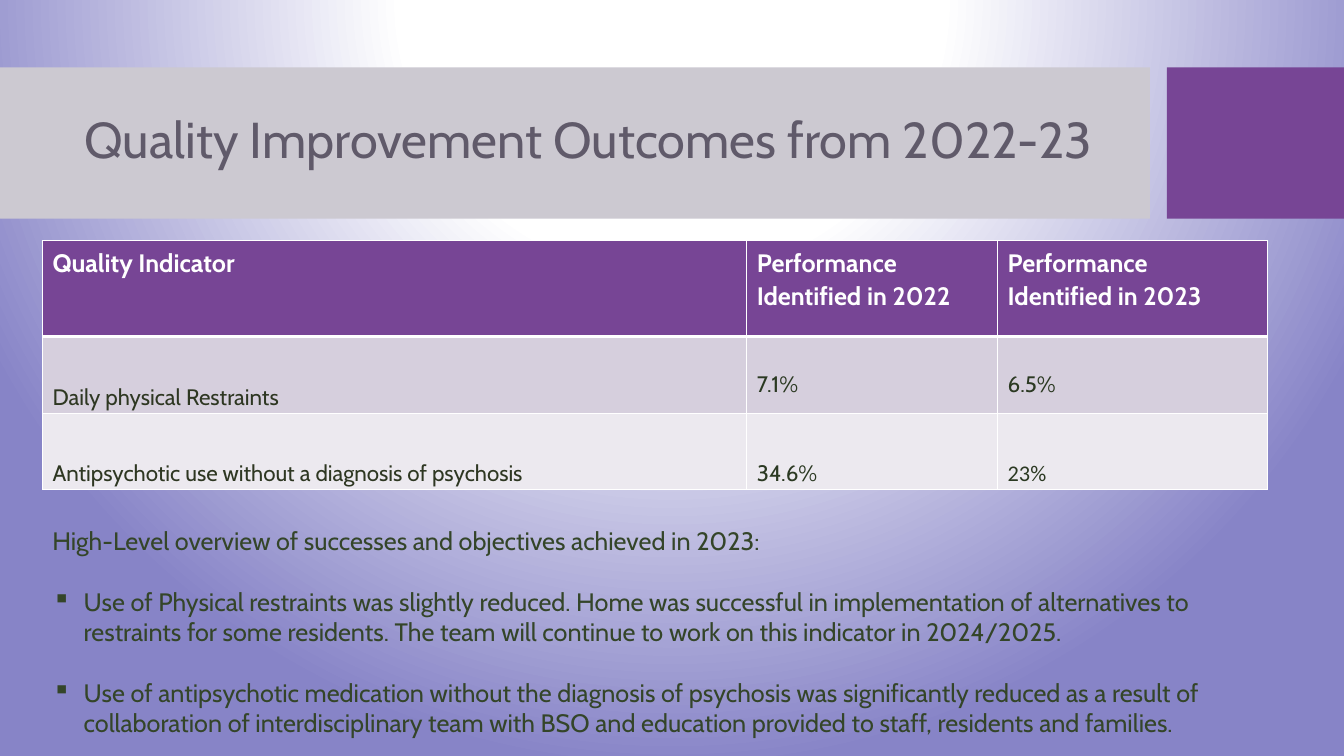
from dataclasses import dataclass

from pptx import Presentation
from pptx.dml.color import RGBColor as Color
from pptx.enum.shapes import MSO_SHAPE as Shape
from pptx.enum.text import MSO_ANCHOR as Anchor
from pptx.oxml import parse_xml
from pptx.oxml.ns import nsdecls
from pptx.util import Cm, Pt


@dataclass(frozen=True)
class Theme:
    """Colours, fonts and type sizes of the slide."""
    font: str = "Cabin"
    figure_font: str = "Calibri"
    white: str = "FFFFFF"
    lavender: str = "8784C7"
    band: str = "CCC9D1"
    purple: str = "774595"
    title: str = "605A6A"
    body: str = "344529"
    label: str = "2E3722"
    figure: str = "2B3922"
    row_fills: tuple = ("D6CFDD", "ECE9EF")
    title_size: int = 36
    body_size: int = 18
    cell_size: int = 16


class Composer:
    """Draws styled elements on the current slide."""

    def __init__(self, page, theme):
        self.page = page
        self.theme = theme

    def backdrop(self):
        """Fill the slide with a radial gradient centred above it."""
        self.page.background.fill.solid()
        solid = self.page.element.xpath("./p:cSld/p:bg/p:bgPr/a:solidFill")[0]
        stops = ((0, self.theme.white), (35, self.theme.white), (100, self.theme.lavender))
        stop_xml = "".join(
            f'<a:gs pos="{place * 1000}"><a:srgbClr val="{color}"/></a:gs>'
            for place, color in stops)
        solid.getparent().replace(solid, parse_xml(
            f'<a:gradFill {nsdecls("a")} rotWithShape="1"><a:gsLst>{stop_xml}</a:gsLst>'
            '<a:path path="circle"><a:fillToRect l="50000" t="-80000" r="50000" b="180000"/>'
            '</a:path></a:gradFill>'))

    def block(self, left, top, width, height, color):
        """Add a plain filled rectangle."""
        block = self.page.shapes.add_shape(
            Shape.RECTANGLE, Cm(left), Cm(top), Cm(width), Cm(height))
        block.shadow.inherit = False
        block.fill.solid()
        block.fill.fore_color.rgb = Color.from_string(color)
        block.line.fill.background()

    def style(self, para, size, color, bold=False, font=None):
        """Set the font of a whole paragraph."""
        para.font.name = font or self.theme.font
        para.font.size = Pt(size)
        para.font.bold = bold
        para.font.color.rgb = Color.from_string(color)

    def text_box(self, left, top, width, height):
        """Add a wrapping text box and return its frame."""
        box = self.page.shapes.add_textbox(Cm(left), Cm(top), Cm(width), Cm(height))
        box.text_frame.word_wrap = True
        return box.text_frame

    def title(self, text, *place):
        """Add the slide title, centred vertically."""
        frame = self.text_box(*place)
        frame.vertical_anchor = Anchor.MIDDLE
        para = frame.paragraphs[0]
        para.text = text
        para.line_spacing = 0.9
        self.style(para, self.theme.title_size, self.theme.title)

    def overview(self, lead, points, *place):
        """Add a lead line followed by bulleted points."""
        frame = self.text_box(*place)
        frame.text = lead
        self.style(frame.paragraphs[0], self.theme.body_size, self.theme.body)
        for point in points:
            para = frame.add_paragraph()
            para.text = point
            para.space_before = Pt(22)
            props = para._p.get_or_add_pPr()
            props.set("marL", str(Cm(0.79)))
            props.set("indent", str(-Cm(0.79)))
            props.append(parse_xml(f'<a:buChar {nsdecls("a")} char="▪"/>'))
            self.style(para, self.theme.body_size, self.theme.body)

    def borders(self, cell, top, bottom):
        """Draw white cell borders with given top and bottom weights."""
        props = cell._tc.get_or_add_tcPr()
        weights = {"L": 1, "R": 1, "T": top, "B": bottom}
        for side, weight in weights.items():
            props.append(parse_xml(
                f'<a:ln{side} {nsdecls("a")} w="{Pt(weight)}"><a:solidFill>'
                f'<a:srgbClr val="{self.theme.white}"/></a:solidFill></a:ln{side}>'))

    def cell(self, cell, text, fill, top=1, bottom=1, inset=0.13, **look):
        """Write one table cell with its fill, borders and text style."""
        self.borders(cell, top, bottom)
        cell.fill.solid()
        cell.fill.fore_color.rgb = Color.from_string(fill)
        cell.margin_top = Cm(inset)
        cell.margin_bottom = Cm(0.05)
        cell.text = text
        para = cell.text_frame.paragraphs[0]
        para.line_spacing = 1.07
        self.style(para, **look)

    def table(self, header, rows, left, top, widths, heights):
        """Add the indicator table."""
        theme = self.theme
        table = self.page.shapes.add_table(
            len(heights), len(widths), Cm(left), Cm(top),
            Cm(sum(widths)), Cm(sum(heights))).table
        table.horz_banding = False
        for column, width in zip(table.columns, widths):
            column.width = Cm(width)
        for row, height in zip(table.rows, heights):
            row.height = Cm(height)
        for column, text in enumerate(header):
            self.cell(table.cell(0, column), text, theme.purple, bottom=3,
                      size=theme.body_size, color=theme.white, bold=True)
        for index, (row, fill) in enumerate(zip(rows, theme.row_fills), 1):
            for column, (text, inset, font) in enumerate(row):
                self.cell(table.cell(index, column), text, fill,
                          top=3 if index == 1 else 1, inset=inset,
                          size=theme.cell_size, font=font,
                          color=theme.figure if column else theme.label)


def main():
    """Build and save the slide."""
    theme = Theme()
    deck = Presentation()
    deck.slide_width, deck.slide_height = Cm(33.87), Cm(19.05)
    composer = Composer(deck.slides.add_slide(deck.slide_layouts[6]), theme)
    composer.backdrop()
    composer.block(0, 1.7, 28.98, 3.81, theme.band)
    composer.block(29.41, 1.7, 4.46, 3.81, theme.purple)
    composer.title("Quality Improvement Outcomes from 2022-23", 1.88, 2.08, 26.7, 3)
    composer.overview(
        "High-Level overview of successes and objectives achieved in 2023:",
        ("Use of Physical restraints was slightly reduced. Home was successful in "
         "implementation of alternatives to restraints for some residents. The team "
         "will continue to work on this indicator in 2024/2025.",
         "Use of antipsychotic medication without the diagnosis of psychosis was "
         "significantly reduced as a result of collaboration of interdisciplinary team "
         "with BSO and education provided to staff, residents and families."),
        1.07, 13.11, 30.88, 6.4)
    high, low = 0.81, 1.14
    composer.table(
        ("Quality Indicator", "Performance Identified in 2022",
         "Performance Identified in 2023"),
        ((("Daily physical Restraints", low, theme.font),
          ("7.1%", high, theme.font), ("6.5%", high, theme.font)),
         (("Antipsychotic use without a diagnosis of psychosis", low, theme.font),
          ("34.6%", low, theme.font), ("23%", low, theme.figure_font))),
        1.07, 6.07, (17.75, 6.32, 6.81), (2.41, 1.93, 1.93))
    deck.save("out.pptx")


if __name__ == "__main__":
    main()
